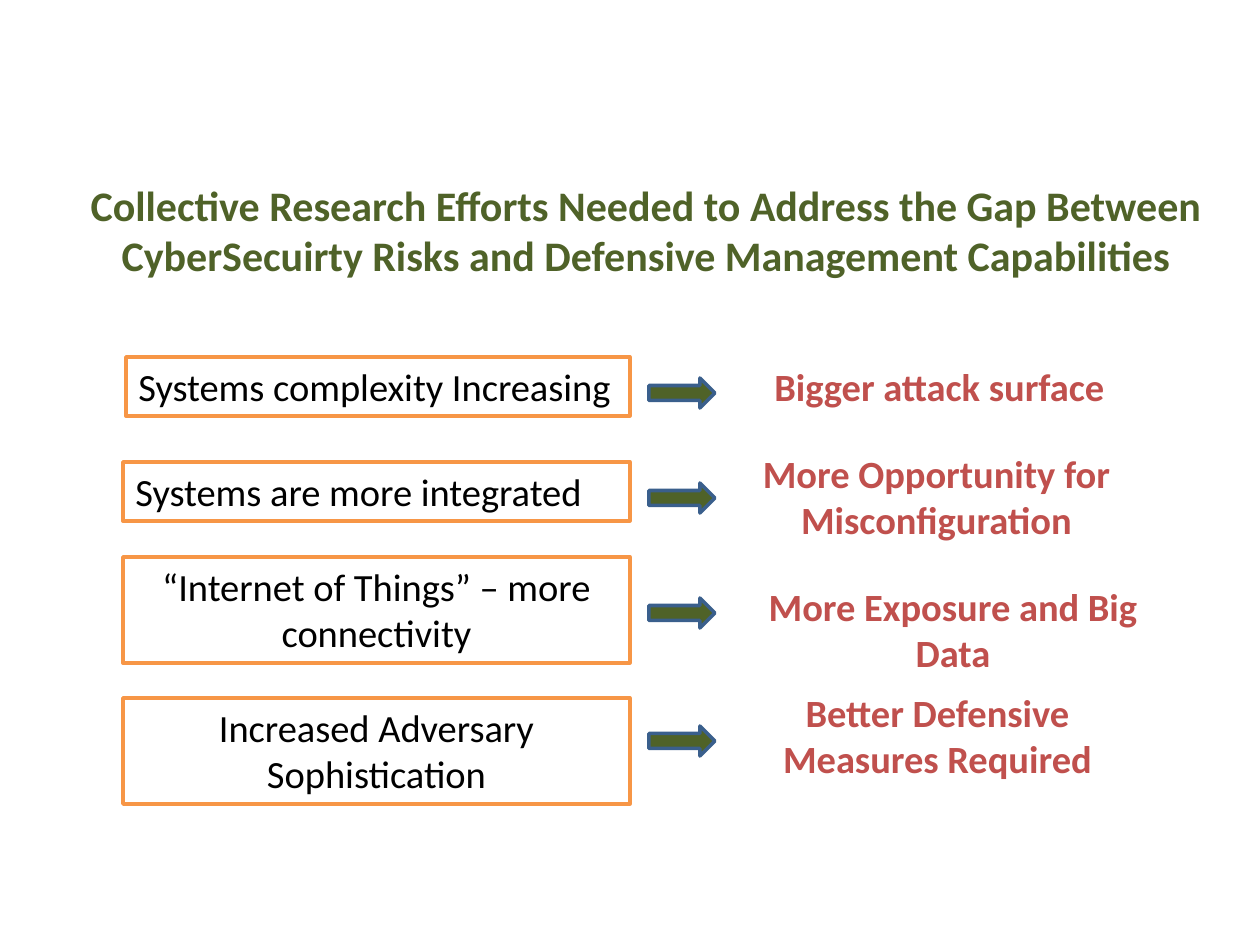
from pptx import Presentation
from pptx.dml.color import RGBColor
from pptx.enum.shapes import MSO_SHAPE
from pptx.enum.text import MSO_ANCHOR, MSO_AUTO_SIZE, PP_ALIGN
from pptx.util import Inches, Pt

EMU_PER_PX = Inches(1) / 126
FONT = "Calibri"
GREEN = RGBColor(0x4F, 0x62, 0x28)
ORANGE = RGBColor(0xF7, 0x96, 0x46)
RED = RGBColor(0xC0, 0x50, 0x4D)
BLUE = RGBColor(0x3A, 0x5F, 0x8C)
BLACK = RGBColor(0, 0, 0)
WHITE = RGBColor(0xFF, 0xFF, 0xFF)
LEFT, CENTER, RIGHT = PP_ALIGN.LEFT, PP_ALIGN.CENTER, PP_ALIGN.RIGHT
RECTANGLE, ARROW = MSO_SHAPE.RECTANGLE, MSO_SHAPE.RIGHT_ARROW

TITLE = ("Collective Research Efforts Needed to Address the Gap Between "
         "CyberSecuirty Risks and Defensive Management Capabilities")
TREND_RIGHT = 630
ARROW_LEFT, ARROW_WIDTH, ARROW_HEIGHT = 649, 66, 30
ONE_LINE, TWO_LINES = 59, 106

# Trend: text, left, top, height, alignment; arrow top;
# outcome: text, box (left, top, width, height), alignment
ROWS = [
    (("Systems complexity Increasing", 126, 357, ONE_LINE, LEFT), 378,
     ("Bigger attack surface", (692, 357, 425, ONE_LINE), RIGHT)),
    (("Systems are more integrated", 123, 462, ONE_LINE, LEFT), 483,
     ("More Opportunity for Misconfiguration", (672, 444, 466, TWO_LINES), CENTER)),
    (("“Internet of Things” – more connectivity", 123, 557, TWO_LINES, CENTER), 598,
     ("More Exposure and Big Data", (677, 577, 489, TWO_LINES), CENTER)),
    (("Increased Adversary Sophistication", 123, 698, TWO_LINES, CENTER), 726,
     ("Better Defensive Measures Required", (673, 683, 466, TWO_LINES), CENTER)),
]


def px(*lengths):
    return [round(length * EMU_PER_PX) for length in lengths]


def write(shape, text, size, color, alignment, bold=False, wrap=True):
    frame = shape.text_frame
    frame.text = text
    frame.word_wrap = wrap
    frame.auto_size = MSO_AUTO_SIZE.NONE
    frame.vertical_anchor = MSO_ANCHOR.TOP
    paragraph = frame.paragraphs[0]
    paragraph.alignment = alignment
    font = paragraph.font
    font.name, font.size, font.bold = FONT, Pt(size), bold
    font.color.rgb = color
    return paragraph


def add_outlined(slide, kind, box, fill, line):
    shape = slide.shapes.add_shape(kind, *px(*box))
    shape.shadow.inherit = False
    shape.fill.solid()
    shape.fill.fore_color.rgb = fill
    shape.line.color.rgb = line
    shape.line.width = Pt(2)
    return shape


def add_title(slide, box):
    title = slide.shapes.title
    title.left, title.top, title.width, title.height = px(*box)
    write(title, TITLE, 24, GREEN, CENTER, bold=True)


def add_trend(slide, text, left, top, height, alignment):
    box = (left, top, TREND_RIGHT - left, height)
    shape = add_outlined(slide, RECTANGLE, box, WHITE, ORANGE)
    write(shape, text, 22, BLACK, alignment)


def add_outcome(slide, text, box, alignment):
    shape = slide.shapes.add_textbox(*px(*box))
    paragraph = write(shape, text, 22, RED, alignment, bold=True,
                      wrap=alignment == CENTER)
    paragraph.level = 1
    properties = paragraph._p.get_or_add_pPr()
    properties.set("marL", str(Inches(0.5)))
    properties.set("indent", "0")


def add_row(slide, trend, arrow_top, outcome):
    add_trend(slide, *trend)
    add_outcome(slide, *outcome)
    arrow_box = (ARROW_LEFT, arrow_top, ARROW_WIDTH, ARROW_HEIGHT)
    add_outlined(slide, ARROW, arrow_box, GREEN, BLUE)


def main():
    presentation = Presentation()
    presentation.slide_width, presentation.slide_height = Inches(10), Inches(7.5)
    slide = presentation.slides.add_slide(presentation.slide_layouts[5])
    add_title(slide, (63, 173, 1166, 59))
    for row in ROWS:
        add_row(slide, *row)
    presentation.save("out.pptx")


if __name__ == "__main__":
    main()
